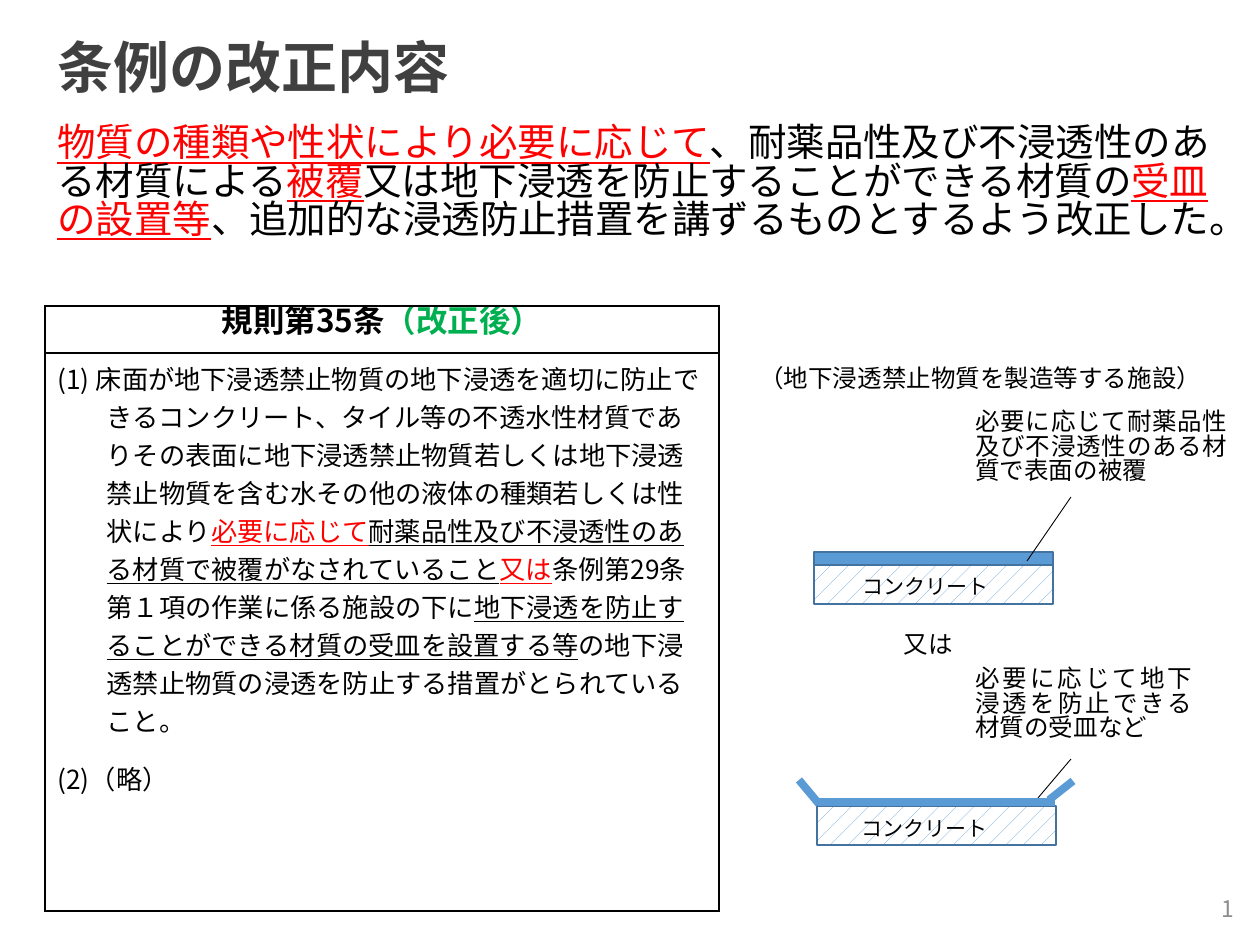
from dataclasses import dataclass

from lxml import etree
from pptx import Presentation, util as u
from pptx.dml.color import RGBColor
from pptx.enum import dml, shapes, text
from pptx.oxml import ns

EMU_PER_PX = 914400 / 126
ALIGN = text.PP_ALIGN


def px(length):
    return u.Emu(round(length * EMU_PER_PX))


@dataclass(frozen=True)
class Theme:
    font: str = "Noto Sans CJK JP"
    ink: str = "000000"
    heading: str = "404040"
    accent: str = "FF0000"
    revised: str = "00B050"
    paper: str = "FFFFFF"
    coating: str = "5B9BD5"
    outline: str = "43739E"
    muted: str = "8C8C8C"
    title: int = 32
    lead: int = 22
    table_head: int = 18
    clause: int = 15
    note: int = 14
    page: int = 13
    label: int = 12
    tight: float = 0.83


class SlideBuilder:
    def __init__(self, slide, theme):
        self.slide = slide
        self.theme = theme

    def color(self, name):
        return RGBColor.from_string(getattr(self.theme, name))

    def runs(self, paragraph, parts, size, bold=False):
        """Each part is (wording, colour name, underlined)."""
        for wording, color, underlined in parts:
            run = paragraph.add_run()
            run.text = wording
            font = run.font
            font.size = u.Pt(size)
            font.bold = bold
            font.underline = underlined
            font.color.rgb = self.color(color)
            font.name = self.theme.font
            east_asian = etree.SubElement(run._r.get_or_add_rPr(), ns.qn("a:ea"))
            east_asian.set("typeface", self.theme.font)

    def text(self, box, parts, size, align=ALIGN.LEFT, bold=False,
             anchor=text.MSO_ANCHOR.TOP):
        frame = self.slide.shapes.add_textbox(*map(px, box)).text_frame
        frame.word_wrap = True
        frame.vertical_anchor = anchor
        paragraph = frame.paragraphs[0]
        paragraph.alignment = align
        paragraph.line_spacing = self.theme.tight
        self.runs(paragraph, parts, size, bold)

    def note(self, box, wording, size=None, align=ALIGN.JUSTIFY):
        self.text(box, [(wording, "ink", False)], size or self.theme.note, align)

    def slab(self, box, hatched=False):
        slab = self.slide.shapes.add_shape(shapes.MSO_SHAPE.RECTANGLE, *map(px, box))
        slab.shadow.inherit = False
        if hatched:
            slab.fill.patterned()
            slab.fill.pattern = dml.MSO_PATTERN.PERCENT_5
            slab.fill.fore_color.rgb = self.color("coating")
            slab.fill.back_color.rgb = self.color("paper")
        else:
            slab.fill.solid()
            slab.fill.fore_color.rgb = self.color("coating")
        slab.line.color.rgb = self.color("outline")
        slab.line.width = u.Pt(1)

    def line(self, start, end, color="ink", width=0.5):
        line = self.slide.shapes.add_connector(
            shapes.MSO_CONNECTOR.STRAIGHT, *map(px, start + end))
        line.line.color.rgb = self.color(color)
        line.line.width = u.Pt(width)
        etree.SubElement(line._element.spPr, ns.qn("a:effectLst"))

    def table(self, box, row_heights):
        table = self.slide.shapes.add_table(len(row_heights), 1, *map(px, box)).table
        table.first_row = table.horz_banding = False
        for row, height in zip(table.rows, row_heights):
            row.height = px(height)
            self.cell_style(row.cells[0])
        return [row.cells[0] for row in table.rows]

    def cell_style(self, cell):
        cell.fill.solid()
        cell.fill.fore_color.rgb = self.color("paper")
        properties = cell._tc.get_or_add_tcPr()
        for place, side in enumerate(("lnL", "lnR", "lnT", "lnB")):
            border = etree.Element(ns.qn(f"a:{side}"), w=str(u.Pt(1)))
            fill = etree.SubElement(border, ns.qn("a:solidFill"))
            etree.SubElement(fill, ns.qn("a:srgbClr"), val=self.theme.ink)
            properties.insert(place, border)


def build_text(page):
    theme = page.theme
    # Title and lead
    page.text((45, 38, 1081, 78), [("条例の改正内容", "heading", False)],
              theme.title, bold=True)
    page.text((45, 120, 1183, 152), [
        ("物質の種類や性状により必要に応じて", "accent", True),
        ("、耐薬品性及び不浸透性のある材質による", "ink", False),
        ("被覆", "accent", True),
        ("又は地下浸透を防止することができる材質の", "ink", False),
        ("受皿の設置等", "accent", True),
        ("、追加的な浸透防止措置を講ずるものとするよう改正した。", "ink", False),
    ], theme.lead)
    # Page number
    page.text((963, 886, 283, 50), [("1", "muted", False)], theme.page,
              ALIGN.RIGHT, anchor=text.MSO_ANCHOR.MIDDLE)


def build_regulation(page):
    theme = page.theme
    head, clauses = page.table((45, 306, 674, 605), (47, 558))

    # Heading row
    head.margin_left = head.margin_right = px(9)
    head.margin_top = head.margin_bottom = 0
    head.vertical_anchor = text.MSO_ANCHOR.MIDDLE
    heading = head.text_frame.paragraphs[0]
    heading.alignment = ALIGN.CENTER
    heading.line_spacing = u.Pt(14)
    page.runs(heading, [("規則第35条", "ink", False), ("（改正後）", "revised", False)],
              theme.table_head, bold=True)

    # Clauses
    first = clauses.text_frame.paragraphs[0]
    indent = first._p.get_or_add_pPr()
    indent.set("marL", str(px(49)))
    indent.set("indent", str(px(-49)))
    page.runs(first, [
        ("(1) 床面が地下浸透禁止物質の地下浸透を適切に防止できるコンクリート、"
         "タイル等の不透水性材質でありその表面に地下浸透禁止物質若しくは"
         "地下浸透禁止物質を含む水その他の液体の種類若しくは性状により", "ink", False),
        ("必要に応じて", "accent", True),
        ("耐薬品性及び不浸透性のある材質で被覆がなされていること", "ink", True),
        ("又は", "accent", True),
        ("条例第29条第１項の作業に係る施設の下に", "ink", False),
        ("地下浸透を防止することができる材質の受皿を設置する等", "ink", True),
        ("の地下浸透禁止物質の浸透を防止する措置がとられていること。", "ink", False),
    ], theme.clause)
    second = clauses.text_frame.add_paragraph()
    second.space_before = u.Pt(11.5)
    page.runs(second, [("(2)（略）", "ink", False)], theme.clause)


def build_diagrams(page):
    label = page.theme.label
    page.note((747, 362, 493, 39), "（地下浸透禁止物質を製造等する施設）")

    # Coated floor
    page.slab((814, 565, 239, 39), hatched=True)
    page.note((850, 572, 176, 37), "コンクリート", label)
    page.slab((814, 552, 239, 13))
    page.line((1027, 561), (1071, 497))
    page.note((963, 405, 277, 106), "必要に応じて耐薬品性及び不浸透性のある材質で表面の被覆")

    page.note((786, 628, 285, 39), "又は", align=ALIGN.CENTER)

    # Floor with a catch tray
    page.slab((817, 806, 239, 39), hatched=True)
    page.note((849, 814, 169, 38), "コンクリート", label)
    page.note((963, 662, 242, 76), "必要に応じて地下浸透を防止できる材質の受皿など")
    page.line((1038, 798), (1071, 759))
    tray = ((799, 780), (819, 804)), ((1049, 800), (1073, 781)), ((818, 802), (1055, 802))
    for start, end in tray:
        page.line(start, end, "coating", 4.5)


def main():
    deck = Presentation()
    deck.slide_width, deck.slide_height = px(1260), px(945)
    page = SlideBuilder(deck.slides.add_slide(deck.slide_layouts[6]), Theme())
    build_text(page)
    build_regulation(page)
    build_diagrams(page)
    deck.save("out.pptx")


if __name__ == "__main__":
    main()
